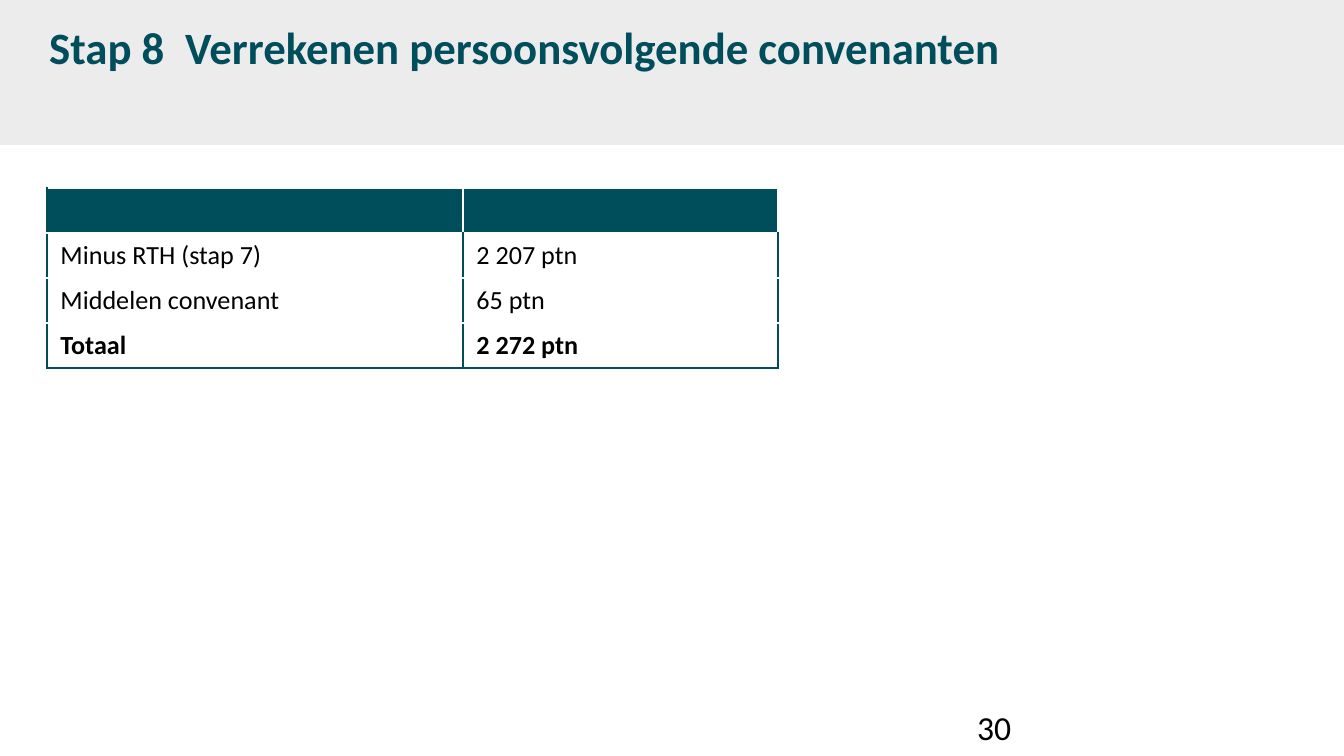
from dataclasses import dataclass

from lxml import etree
from pptx import Presentation
from pptx.dml.color import RGBColor
from pptx.enum import shapes, text
from pptx.oxml import ns
from pptx import util as u

PX = 914400 / 134.4  # EMU in one px


@dataclass(frozen=True)
class Theme:
    font: str = "Calibri"
    teal: str = "004D5C"
    band: str = "ECECEC"
    white: str = "FFFFFF"
    black: str = "000000"
    title: int = 24
    number: int = 18
    body: int = 14


T = Theme()


def px(n):
    return u.Emu(round(n * PX))


def rgb(color):
    return RGBColor.from_string(color)


def style(p, size, color, bold=False):
    f = p.font
    f.name, f.size, f.bold = T.font, u.Pt(size), bold
    f.color.rgb = rgb(color)


def add_text(s, box, words):
    sp = s.shapes.add_textbox(*map(px, box))
    tf = sp.text_frame
    tf.word_wrap = True
    p = tf.paragraphs[0]
    p.text = words
    return tf, p


def set_borders(cell, **sides):
    """Draw 1 pt lines on the given sides (L, R, T, B, in that order)."""
    tc_pr = cell._tc.get_or_add_tcPr()
    for i, (side, color) in enumerate(sides.items()):
        ln = etree.Element(ns.qn(f"a:ln{side}"), w=str(u.Pt(1)))
        fill = etree.SubElement(ln, ns.qn("a:solidFill"))
        etree.SubElement(fill, ns.qn("a:srgbClr"), val=color)
        tc_pr.insert(i, ln)


def header(s, x, y, w, h):
    # Grey band
    sp = s.shapes.add_shape(shapes.MSO_SHAPE.RECTANGLE, *map(px, (x, y, w, h)))
    sp.shadow.inherit = False
    sp.fill.solid()
    sp.fill.fore_color.rgb = rgb(T.band)
    sp.line.fill.background()

    # Title, with a tab between step and subject
    tf, p = add_text(s, (x + 36, y + 3, w - 74, 93),
                     "Stap 8\tVerrekenen persoonsvolgende convenanten")
    tf.vertical_anchor = text.MSO_ANCHOR.MIDDLE
    tabs = etree.SubElement(p._p.get_or_add_pPr(), ns.qn("a:tabLst"))
    etree.SubElement(tabs, ns.qn("a:tab"), pos=str(px(136)), algn="l")
    style(p, T.title, T.teal, True)


def points_table(s, x, y, widths, row_h):
    rows = [("", ""),
            ("Minus RTH (stap 7)", "2 207 ptn"),
            ("Middelen convenant", "65 ptn"),
            ("Totaal", "2 272 ptn")]
    last = len(rows) - 1
    box = (x, y, sum(widths), row_h * len(rows))
    table = s.shapes.add_table(len(rows), len(widths), *map(px, box)).table
    table.horz_banding = False
    for col, w in zip(table.columns, widths):
        col.width = px(w)

    for r, row in enumerate(rows):
        table.rows[r].height = px(row_h)
        for c, words in enumerate(row):
            cell = table.cell(r, c)
            p = cell.text_frame.paragraphs[0]
            p.text = words
            style(p, T.body, T.black, r == last)
            if r == 0:
                # Empty header cells keep the body type size
                etree.SubElement(p._p, ns.qn("a:endParaRPr"), sz=str(T.body * 100))
                cell.fill.solid()
                cell.fill.fore_color.rgb = rgb(T.teal)
                set_borders(cell, L=T.white if c else T.teal, R=T.white, T=T.white)
            else:
                cell.fill.background()
                bottom = {"B": T.teal} if r == last else {}
                set_borders(cell, L=T.teal, R=T.teal, **bottom)


def page_number(s, x, y, w, h):
    _, p = add_text(s, (x, y, w, h), "30")
    style(p, T.number, T.black)


def main():
    prs = Presentation()
    prs.slide_width, prs.slide_height = px(1344), px(756)
    s = prs.slides.add_slide(prs.slide_layouts[6])
    header(s, 0, -3, 1344, 148)
    points_table(s, 47, 188, (416, 315), 45)
    page_number(s, 964, 700, 313, 40)
    prs.save("out.pptx")


if __name__ == "__main__":
    main()
